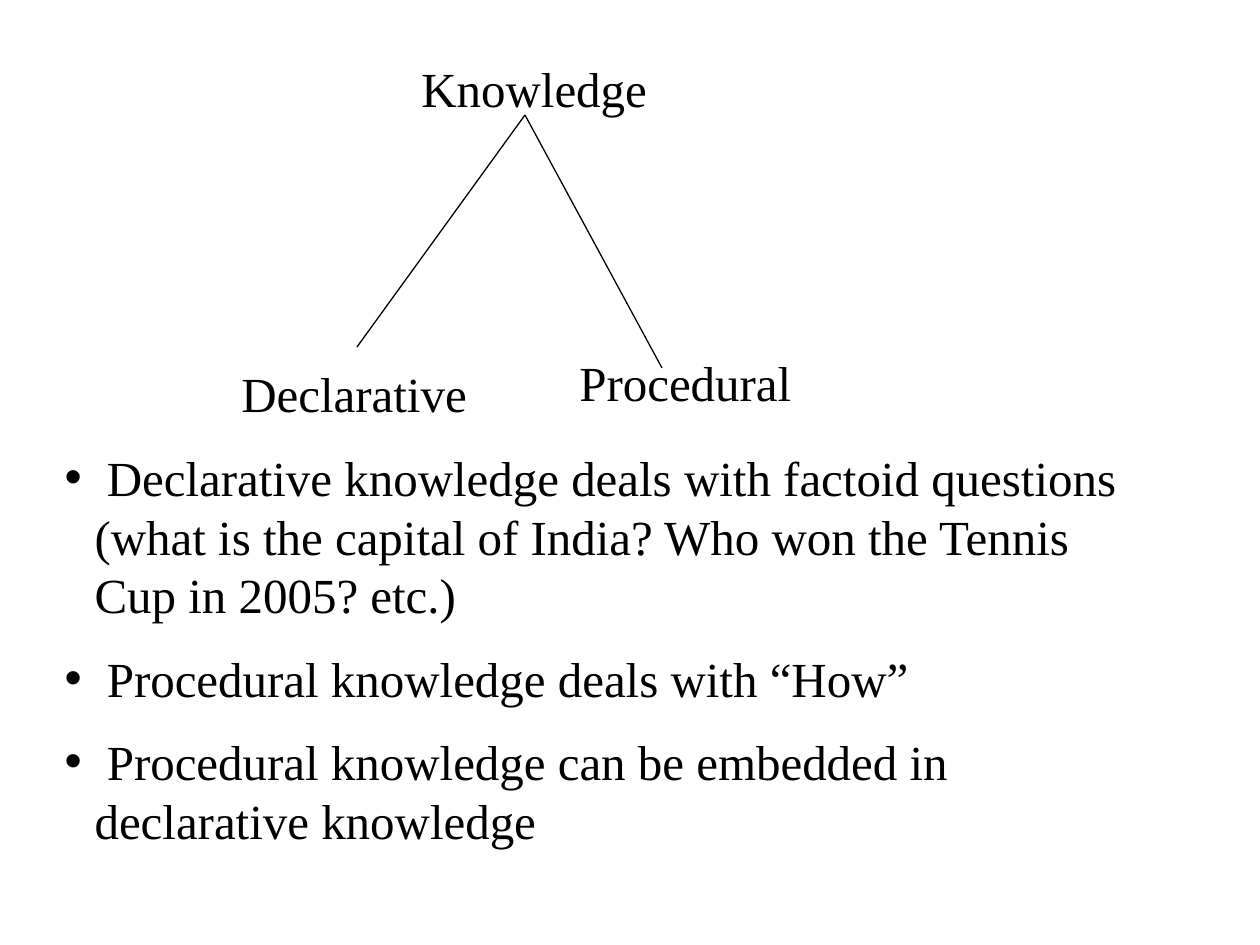
from pptx import Presentation
from pptx.dml.color import RGBColor
from pptx.enum.shapes import MSO_CONNECTOR as CONN
from pptx.enum.text import MSO_ANCHOR as ANCHOR, MSO_AUTO_SIZE as AUTO
from pptx.util import Emu, Pt
from pptx.oxml.ns import qn
from lxml.etree import SubElement

BLACK = RGBColor(0x00, 0x00, 0x00)
WHITE = RGBColor(0xFF, 0xFF, 0xFF)
PX_PER_INCH = 126


def px(n):
    return Emu(round(n * 914400 / PX_PER_INCH))


def write(p, text, *, font, size, color, before=0):
    """Put formatted text in a paragraph."""
    p.space_before = Pt(before)
    r = p.add_run()
    r.text = text
    r.font.name = font
    r.font.size = Pt(size)
    r.font.color.rgb = color


class Deck:
    style = {"font": "Times New Roman", "size": 28, "color": BLACK}
    gap = 14
    indent = 30

    def __init__(self, width, height):
        self.prs = Presentation()
        self.prs.slide_width, self.prs.slide_height = px(width), px(height)

    def new_slide(self):
        self.slide = self.prs.slides.add_slide(self.prs.slide_layouts[1])
        title = self.slide.shapes.title
        title.element.getparent().remove(title.element)
        fill = self.slide.background.fill
        fill.solid()
        fill.fore_color.rgb = WHITE

    def label(self, text, x, y, w, h):
        sp = self.slide.shapes.add_textbox(px(x), px(y), px(w), px(h))
        sp.text_frame.word_wrap = True
        write(sp.text_frame.paragraphs[0], text, **self.style)

    def line(self, start, end):
        points = [px(n) for n in (*start, *end)]
        cxn = self.slide.shapes.add_connector(CONN.STRAIGHT, *points)
        cxn.line.color.rgb = BLACK
        cxn.line.width = Pt(0.75)
        SubElement(cxn.element.spPr, qn("a:effectLst"))

    def bullets(self, items, x, y, w, h):
        sp = self.slide.placeholders[1]
        sp.left, sp.top, sp.width, sp.height = px(x), px(y), px(w), px(h)
        tf = sp.text_frame
        tf.word_wrap = True
        tf.auto_size = AUTO.NONE
        tf.vertical_anchor = ANCHOR.TOP
        for i, text in enumerate(items):
            p = tf.add_paragraph() if i else tf.paragraphs[0]
            write(p, text, before=self.gap if i else 0, **self.style)
            pPr = p._p.get_or_add_pPr()
            pPr.set("marL", str(px(self.indent)))
            pPr.set("indent", str(-px(self.indent)))
            SubElement(pPr, qn("a:buChar"), char="•")


def main():
    deck = Deck(1260, 945)
    deck.new_slide()

    # Knowledge tree
    root = (525, 115)
    deck.label("Knowledge", 409, 52, 315, 72)
    for end in ((357, 347), (662, 368)):
        deck.line(root, end)
    deck.label("Declarative", 229, 357, 294, 72)
    deck.label("Procedural", 567, 346, 368, 72)

    # Explanation of the two branches
    deck.bullets([
        " Declarative knowledge deals with factoid questions (what is the "
        "capital of India? Who won the Tennis Cup in 2005? etc.)",
        " Procedural knowledge deals with “How”",
        " Procedural knowledge can be embedded in declarative knowledge",
    ], 52, 441, 1103, 425)

    deck.prs.save("out.pptx")


if __name__ == "__main__":
    main()
